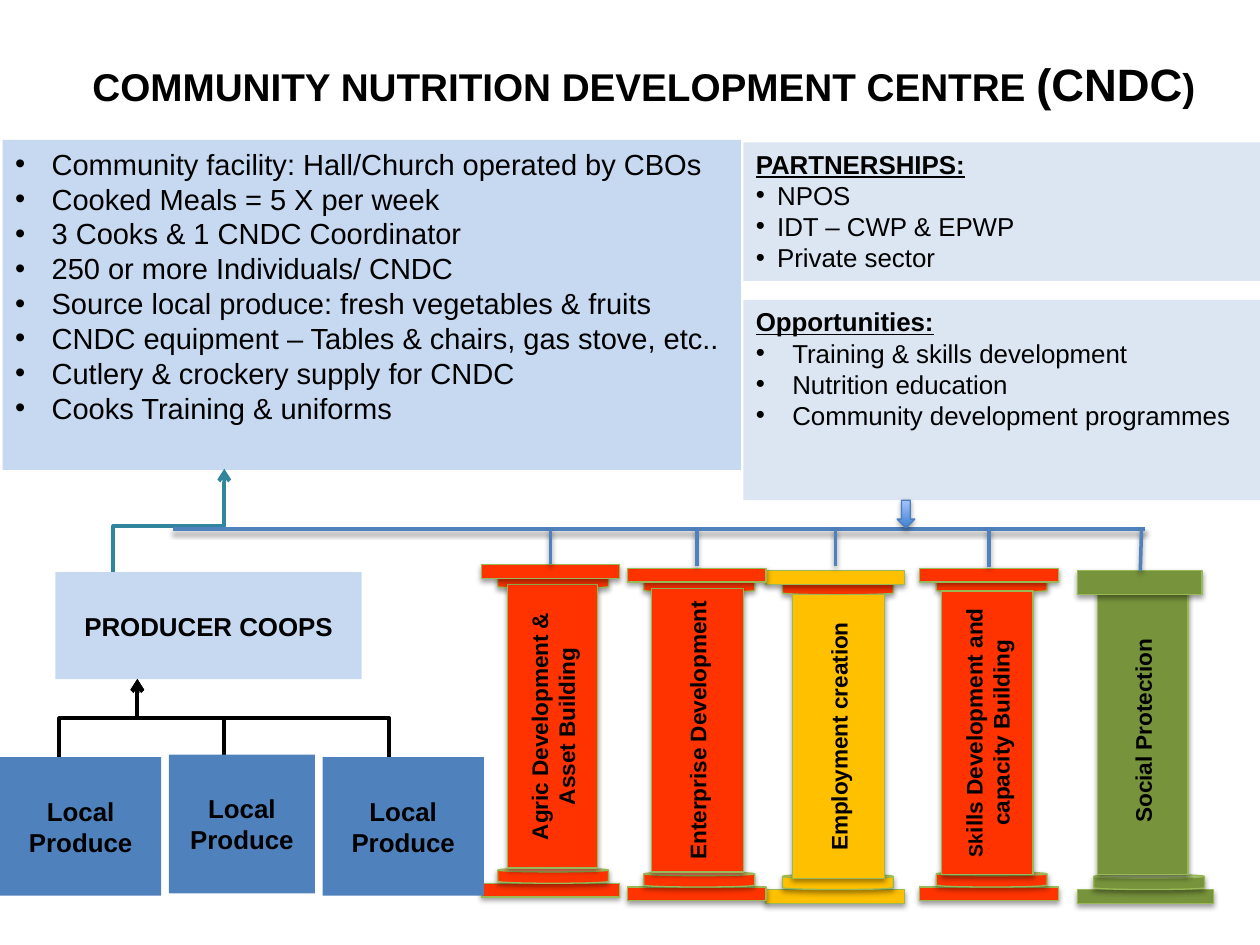
from lxml import etree
from pptx import Presentation
from pptx.dml.color import RGBColor
from pptx.enum.shapes import MSO_CONNECTOR, MSO_SHAPE
from pptx.enum.text import MSO_ANCHOR, MSO_AUTO_SIZE, PP_ALIGN
from pptx.oxml.ns import qn
from pptx.util import Inches, Pt

RECT, CAN, ARROW = MSO_SHAPE.RECTANGLE, MSO_SHAPE.CAN, MSO_SHAPE.DOWN_ARROW
STRAIGHT, ELBOW = MSO_CONNECTOR.STRAIGHT, MSO_CONNECTOR.ELBOW
TOP, MIDDLE = MSO_ANCHOR.TOP, MSO_ANCHOR.MIDDLE
LEFT, CENTER = PP_ALIGN.LEFT, PP_ALIGN.CENTER
FIXED_SIZE = MSO_AUTO_SIZE.NONE
COLORS = {
    "text": "000000", "panel": "C6D9F1", "side": "DCE6F2", "blue": "4F81BD",
    "red": "FF3300", "yellow": "FFC000", "green": "77933C", "edge": "98B955",
    "teal": "31859C", "arrow_edge": "4B7EBC", "arrow_dark": "3F80CE",
    "arrow_light": "A4C4FF",
}


def color(name):
    return RGBColor.from_string(COLORS[name])


class Board:
    font = "Arial"

    def __init__(self, slide):
        self.slide = slide

    def format_runs(self, paragraph, size, bold=False, underline=False):
        for run in paragraph.runs:
            run.font.name = self.font
            run.font.size = Pt(size)
            run.font.bold = bold
            run.font.underline = underline
            run.font.color.rgb = color("text")

    def mixed_line(self, frame, pieces):
        """Write one bold centred line from (text, size) pieces."""
        frame.word_wrap = True
        frame.vertical_anchor = MIDDLE
        paragraph = frame.paragraphs[0]
        paragraph.alignment = CENTER
        for text, size in pieces:
            run = paragraph.add_run()
            run.text = text
            run.font.name = self.font
            run.font.size = Pt(size)
            run.font.bold = True
            run.font.color.rgb = color("text")

    def place(self, shape, left, top, width, height):
        shape.left, shape.top = Inches(left), Inches(top)
        shape.width, shape.height = Inches(width), Inches(height)

    def title(self, box, pieces):
        title = self.slide.shapes.title
        self.place(title, *box)
        title.text_frame.auto_size = FIXED_SIZE
        self.mixed_line(title.text_frame, pieces)

    def bullets(self, frame, items, size, indent, heading=None):
        frame.auto_size = FIXED_SIZE
        frame.word_wrap = True
        frame.vertical_anchor = TOP
        frame.text = "\n".join(([heading] if heading else []) + items)
        for index, paragraph in enumerate(frame.paragraphs):
            is_heading = heading is not None and index == 0
            paragraph.alignment = LEFT
            paragraph.space_before = Pt(0)
            if not is_heading:
                properties = paragraph._p.get_or_add_pPr()
                properties.set("marL", str(Inches(indent)))
                properties.set("indent", str(-Inches(indent)))
                face = etree.SubElement(properties, qn("a:buFont"))
                face.set("typeface", self.font)
                etree.SubElement(properties, qn("a:buChar")).set("char", "•")
            self.format_runs(paragraph, size, is_heading, is_heading)

    def body(self, box, items):
        body = self.slide.placeholders[1]
        self.place(body, *box)
        body.fill.solid()
        body.fill.fore_color.rgb = color("panel")
        self.bullets(body.text_frame, items, 16.6, 0.29)

    def block(self, kind, box, fill, edge=None, shadow=False):
        shape = self.slide.shapes.add_shape(kind, *map(Inches, box))
        shape.shadow.inherit = False
        shape.fill.solid()
        shape.fill.fore_color.rgb = color(fill)
        if edge:
            shape.line.color.rgb = color(edge)
            shape.line.width = Pt(0.75)
        else:
            shape.line.fill.background()
        if shadow:
            self.drop_shadow(shape.element.spPr.find(qn("a:effectLst")))
        return shape

    def drop_shadow(self, effects):
        outer = etree.SubElement(
            effects, qn("a:outerShdw"), blurRad=str(Pt(3.1)),
            dist=str(Pt(1.6)), dir="5400000", rotWithShape="0")
        tone = etree.SubElement(outer, qn("a:srgbClr"), val=COLORS["text"])
        etree.SubElement(tone, qn("a:alpha"), val="38000")

    def side_panel(self, box, heading, items, indent):
        panel = self.block(RECT, box, "side")
        self.bullets(panel.text_frame, items, 14.8, indent, heading)

    def label_box(self, box, text, fill):
        shape = self.block(RECT, box, fill)
        self.mixed_line(shape.text_frame, [(text, 14.8)])

    def pillar(self, left, top, fill, pieces, shaft, cap=(1.1, 0.11),
               base_width=1.1, neck="red"):
        """Stack base, neck, foot, shaft and cap; shaft is relative to the cap."""
        def part(kind, x, y, width, height, part_fill=fill):
            return self.block(kind, (left + x, top + y, width, height),
                              part_fill, "edge", True)

        part(RECT, 0, 2.53, base_width, 0.11)
        if neck:
            part(CAN, 0.13, 0.08, 0.88, 0.11, neck)
        part(CAN, 0.13, 2.41, 0.88, 0.12)
        frame = part(RECT, *shaft).text_frame
        frame._txBody.bodyPr.set("vert", "vert270")
        self.mixed_line(frame, pieces)
        part(RECT, 0, 0, *cap)

    def connector(self, kind, ends, tone, width, shadow=False):
        line = self.slide.shapes.add_connector(kind, *map(Inches, ends))
        line.line.color.rgb = color(tone)
        line.line.width = Pt(width)
        effects = etree.SubElement(line.element.spPr, qn("a:effectLst"))
        if shadow:
            self.drop_shadow(effects)
        return line

    def rising_elbow(self, x1, y1, x2, y2, tone):
        """Arrow that leaves upwards, crosses halfway and ends upwards."""
        run, rise = x2 - x1, y1 - y2
        middle_x, middle_y = (x1 + x2) / 2, (y1 + y2) / 2
        # Laid out sideways around its centre, then turned by 270 degrees.
        ends = (middle_x - rise / 2, middle_y - run / 2,
                middle_x + rise / 2, middle_y + run / 2)
        elbow = self.connector(ELBOW, ends, tone, 2.25)
        elbow.element.spPr.find(qn("a:xfrm")).set("rot", "16200000")
        etree.SubElement(elbow.line._get_or_add_ln(), qn("a:tailEnd"), type="arrow")

    def down_arrow(self, box):
        arrow = self.block(ARROW, box, "blue", "arrow_edge", True)
        arrow.fill.gradient()
        arrow.fill.gradient_angle = 90
        for stop, tone in zip(arrow.fill.gradient_stops, ("arrow_dark", "arrow_light")):
            stop.color.rgb = color(tone)


def main():
    deck = Presentation()
    deck.slide_width, deck.slide_height = Inches(10), Inches(7.5)
    board = Board(deck.slides.add_slide(deck.slide_layouts[1]))

    board.title((0.17, 0.33, 9.88, 0.67), [
        ("COMMUNITY NUTRITION DEVELOPMENT CENTRE ", 22.1), ("(CNDC", 25.9), (")", 22.1)])
    board.body((0.02, 1.11, 5.86, 2.62), [
        "Community facility: Hall/Church operated by CBOs",
        "Cooked Meals = 5 X per week",
        "3 Cooks & 1 CNDC Coordinator",
        "250 or more Individuals/ CNDC",
        "Source local produce: fresh vegetables & fruits",
        "CNDC equipment – Tables & chairs, gas stove, etc..",
        "Cutlery & crockery supply for CNDC",
        "Cooks Training & uniforms"])
    board.side_panel((5.9, 1.13, 4.1, 1.1), "PARTNERSHIPS:",
                     ["NPOS", "IDT – CWP & EPWP", "Private sector"], 0.17)
    board.side_panel((5.9, 2.38, 4.1, 1.59), "Opportunities:",
                     ["Training & skills development", "Nutrition education",
                      "Community development programmes"], 0.29)

    board.pillar(3.82, 4.48, "red", [("Agric Development & Asset Building", 12.9)],
                 (0.21, 0.16, 0.71, 2.25))
    board.pillar(7.3, 4.51, "red",
                 [("Sk", 11.1), ("ills Development and capacity Building", 12.9)],
                 (0.17, 0.18, 0.73, 2.25))
    board.pillar(6.08, 4.53, "yellow", [("Employment creation", 12.9)],
                 (0.21, 0.19, 0.73, 2.25))
    board.pillar(4.98, 4.51, "red", [("Enterprise Development", 12.9)],
                 (0.19, 0.16, 0.73, 2.25))
    board.pillar(8.55, 4.53, "green", [("Social Protection", 12.9)],
                 (0.16, 0.13, 0.72, 2.28), cap=(0.99, 0.19), base_width=1.08, neck=None)

    board.rising_elbow(0.9, 4.63, 1.78, 3.72, "teal")
    board.label_box((0.44, 4.54, 2.43, 0.85), "PRODUCER COOPS", "panel")
    for produce_x in (1.78, 0.47, 3.09):
        board.rising_elbow(produce_x, 6.01, 1.09, 5.39, "text")
    for left, top, width in ((0, 6.01, 1.28), (1.34, 5.99, 1.16), (2.56, 6.01, 1.28)):
        board.label_box((left, top, width, 1.1), "Local Produce", "blue")

    beam_y = 4.2
    board.connector(STRAIGHT, (1.37, beam_y, 9.09, beam_y), "blue", 2, True)
    for x, end_x, end_y in ((9.06, 9.05, 4.53), (7.85, 7.85, 4.5), (4.37, 4.37, 4.48),
                            (5.53, 5.53, 4.49), (6.63, 6.63, 4.49)):
        board.connector(STRAIGHT, (x, beam_y, end_x, end_y), "blue", 2, True)
    board.down_arrow((7.12, 3.97, 0.14, 0.22))

    deck.save("out.pptx")


if __name__ == "__main__":
    main()
